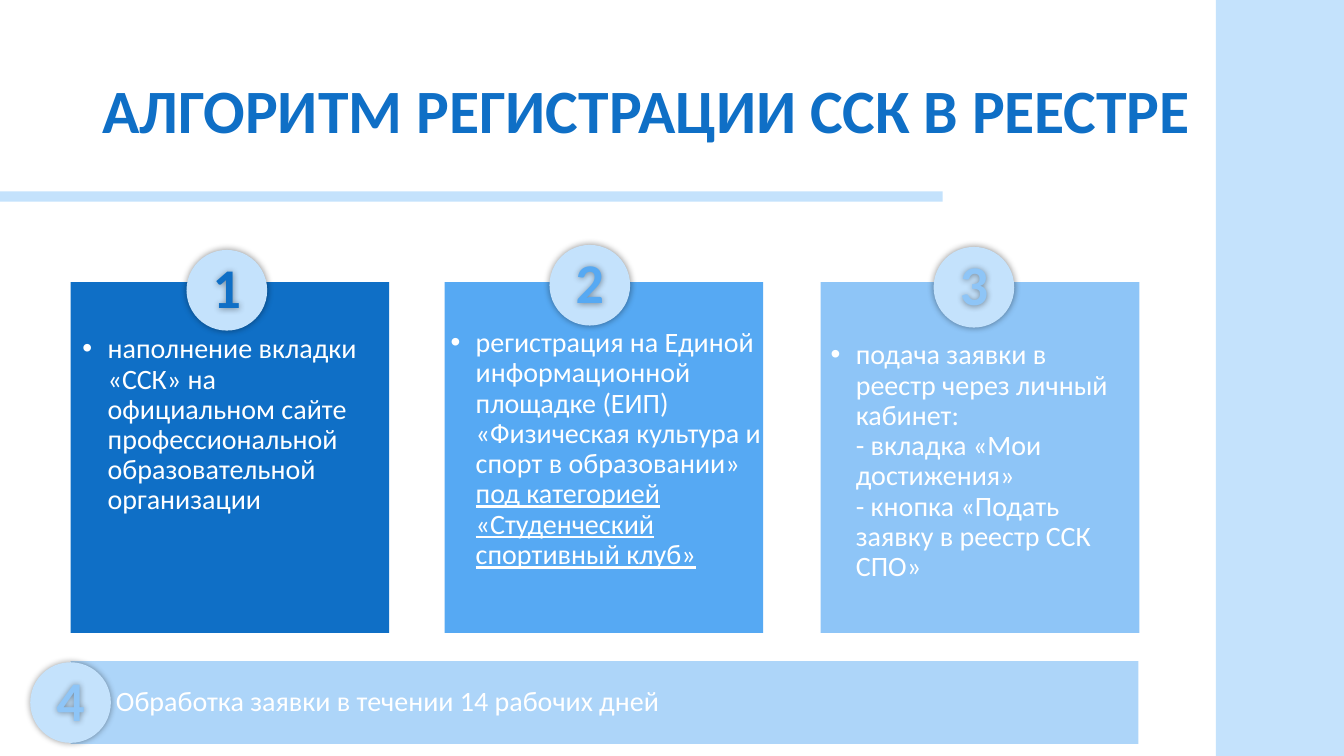
from lxml import etree
from pptx import Presentation
from pptx.dml.color import RGBColor
from pptx.enum.shapes import MSO_SHAPE as SHAPE
from pptx.enum.text import MSO_ANCHOR as ANCHOR, PP_ALIGN as ALIGN
from pptx.oxml.ns import qn
from pptx.util import Inches, Pt

COLORS = {
    "white": "FFFFFF",
    "black": "000000",
    "dark": "0F6FC6",
    "medium": "56A9F3",
    "light": "8EC5F7",
    "bar": "ADD5F9",
    "pale": "C4E2FC",
}
FONT = "Calibri"
CARD_TOP, CARD_WIDTH, CARD_HEIGHT = 2.8, 3.16, 3.48
BADGE_SIZE = 0.8

# Card left, colour, text box (left, top, width), badge (left, top), text runs (text, underlined)
STEPS = [
    (0.7, "dark", (0.72, 3.27, 3.07), (1.85, 2.48), [
        ("наполнение вкладки «ССК» на официальном сайте профессиональной "
         "образовательной организации", False)]),
    (4.41, "medium", (4.37, 3.21, 3.28), (5.45, 2.43), [
        ("регистрация на Единой информационной площадке (ЕИП) "
         "«Физическая культура и спорт в образовании» ", False),
        ("под категорией «Студенческий спортивный клуб»", True)]),
    (8.14, "light", (8.14, 3.33, 3.07), (9.26, 2.45), [
        ("подача заявки в реестр через личный кабинет:\n"
         "- вкладка «Мои достижения»\n"
         "- кнопка «Подать заявку в реестр ССК СПО»", False)]),
]


def rgb(color):
    return RGBColor.from_string(COLORS[color])


def add_filled(slide, kind, left, top, width, height, color):
    shape = slide.shapes.add_shape(
        kind, Inches(left), Inches(top), Inches(width), Inches(height))
    shape.shadow.inherit = False
    shape.fill.solid()
    shape.fill.fore_color.rgb = rgb(color)
    shape.line.fill.background()
    return shape


def add_box(slide, left, top, width, height):
    box = slide.shapes.add_textbox(
        Inches(left), Inches(top), Inches(width), Inches(height))
    box.text_frame.word_wrap = True
    return box


def add_text(paragraph, text, color, **font_values):
    """Add a run per line of text, with line breaks between them."""
    for index, line in enumerate(text.split("\n")):
        if index:
            paragraph.add_line_break()
        run = paragraph.add_run()
        run.text = line
        run.font.name = FONT
        run.font.color.rgb = rgb(color)
        for name, value in font_values.items():
            setattr(run.font, name, value)


def add_bullet(paragraph, color):
    properties = paragraph._p.get_or_add_pPr()
    properties.set("marL", str(Inches(0.25)))
    properties.set("indent", str(-Inches(0.25)))
    bullet_color = etree.SubElement(properties, qn("a:buClr"))
    etree.SubElement(bullet_color, qn("a:srgbClr"), val=COLORS[color])
    etree.SubElement(properties, qn("a:buFont"), typeface="Arial")
    etree.SubElement(properties, qn("a:buChar"), char="•")


def add_soft_shadow(shape):
    shape.shadow.inherit = False
    effects = shape._element.spPr.find(qn("a:effectLst"))
    shadow = etree.SubElement(
        effects, qn("a:outerShdw"), blurRad=str(Pt(5)), dist="0", dir="0",
        algn="ctr", rotWithShape="0")
    color = etree.SubElement(shadow, qn("a:srgbClr"), val=COLORS["black"])
    etree.SubElement(color, qn("a:alpha"), val="40000")


def add_badge(slide, number, left, top, color):
    circle = add_filled(
        slide, SHAPE.OVAL, left, top, BADGE_SIZE, BADGE_SIZE, "pale")
    label = add_box(slide, left, top - 0.02, BADGE_SIZE, 0.77)
    for shape in (circle, label):
        add_soft_shadow(shape)
    paragraph = label.text_frame.paragraphs[0]
    paragraph.alignment = ALIGN.CENTER
    add_text(paragraph, str(number), color, size=Pt(40), bold=True)


def add_step(slide, number, left, color, text_place, badge_place, runs):
    add_filled(slide, SHAPE.RECTANGLE, left, CARD_TOP, CARD_WIDTH, CARD_HEIGHT, color)
    paragraph = add_box(slide, *text_place, 2.92).text_frame.paragraphs[0]
    paragraph.line_spacing = 0.9
    add_bullet(paragraph, "white")
    for text, underlined in runs:
        add_text(paragraph, text, "white", size=Pt(20), underline=underlined)
    add_badge(slide, number, *badge_place, color)


def add_title(slide, text):
    frame = add_box(slide, 0.92, 0.4, 11.5, 1.45).text_frame
    frame.vertical_anchor = ANCHOR.MIDDLE
    paragraph = frame.paragraphs[0]
    paragraph.line_spacing = 0.9
    add_text(paragraph, text, "dark", size=Pt(44), bold=True)


def add_final_step(slide, number, text):
    bar = add_filled(slide, SHAPE.RECTANGLE, 0.7, 6.56, 10.59, 0.82, "bar")
    frame = bar.text_frame
    frame.margin_left = Inches(0.45)
    frame.vertical_anchor = ANCHOR.MIDDLE
    paragraph = frame.paragraphs[0]
    paragraph.alignment = ALIGN.LEFT
    paragraph.line_spacing = 0.9
    add_text(paragraph, text, "white", size=Pt(20))
    add_badge(slide, number, 0.3, 6.57, "light")


def main():
    presentation = Presentation()
    presentation.slide_width = Inches(13.33)
    presentation.slide_height = Inches(7.5)
    slide = presentation.slides.add_slide(presentation.slide_layouts[6])

    add_filled(slide, SHAPE.RECTANGLE, 12.06, 0, 1.27, 7.5, "pale")
    add_filled(slide, SHAPE.RECTANGLE, 0, 1.9, 9.35, 0.1, "pale")
    add_title(slide, "АЛГОРИТМ РЕГИСТРАЦИИ ССК В РЕЕСТРЕ")
    for number, step in enumerate(STEPS, start=1):
        add_step(slide, number, *step)
    add_final_step(slide, len(STEPS) + 1, "Обработка заявки в течении 14 рабочих дней")

    presentation.save("out.pptx")


if __name__ == "__main__":
    main()
